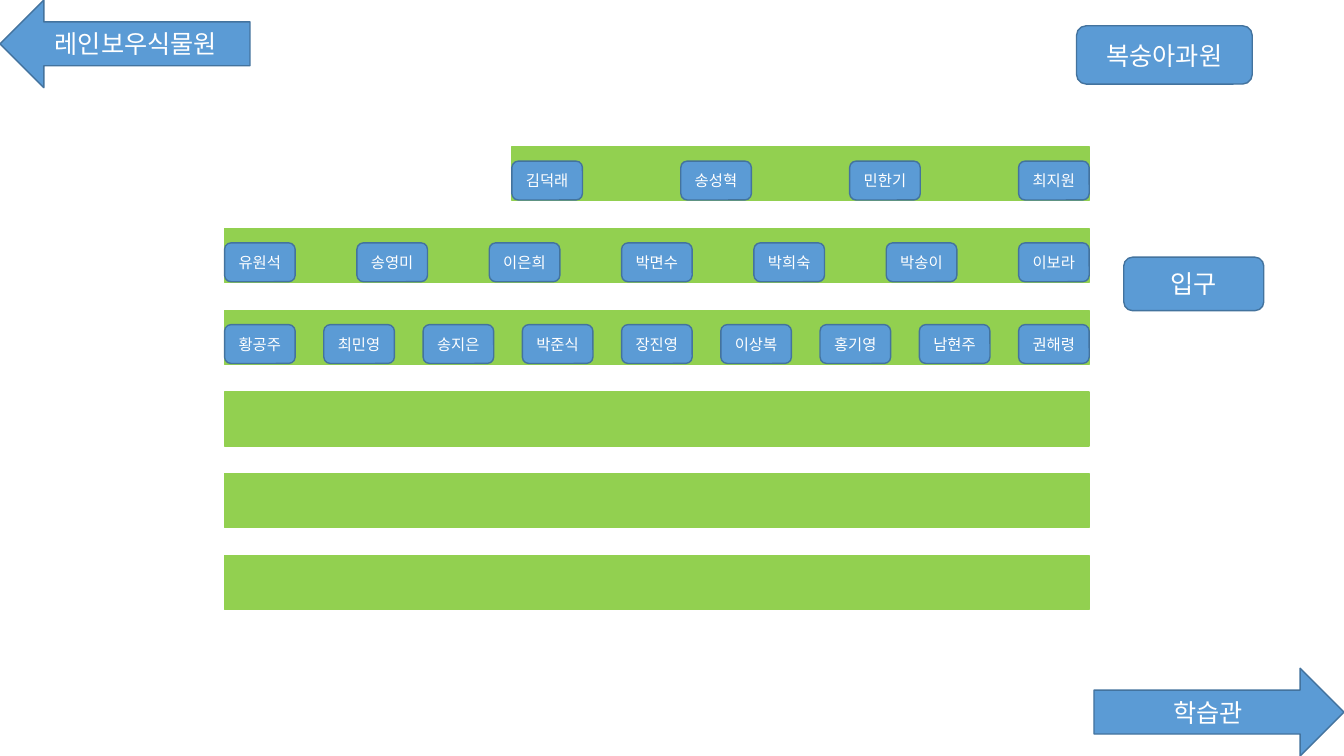
"""Build the orchard tree map with its rows of name tags and direction signs."""

from dataclasses import dataclass

from lxml.etree import SubElement
from pptx import Presentation
from pptx.dml.color import RGBColor
from pptx.enum.shapes import MSO_SHAPE
from pptx.enum.text import MSO_ANCHOR, PP_ALIGN
from pptx.oxml.ns import qn
from pptx.shapes.autoshape import Shape
from pptx.slide import Slide
from pptx.util import Cm, Pt


@dataclass(frozen=True)
class Theme:
    font: str = "Noto Sans CJK KR"
    text: RGBColor = RGBColor(0xFF, 0xFF, 0xFF)
    label_fill: RGBColor = RGBColor(0x5B, 0x9B, 0xD5)
    label_line: RGBColor = RGBColor(0x43, 0x73, 0x9E)
    bed: RGBColor = RGBColor(0x92, 0xD0, 0x50)
    line_width: float = 1
    sign_size: float = 18
    tag_size: float = 11


@dataclass(frozen=True)
class Box:
    left: float
    top: float
    width: float
    height: float


@dataclass(frozen=True)
class Sign:
    text: str
    kind: MSO_SHAPE
    box: Box


@dataclass(frozen=True)
class Bed:
    left: float
    names: tuple[str, ...] = ()


THEME = Theme()
SLIDE_WIDTH, SLIDE_HEIGHT = 33.87, 19.05
ARROW_WIDTH, ARROW_HEIGHT = 6.3, 2.21
BED_LEFT, BED_RIGHT = 5.66, 27.45
BED_TOP, BED_PITCH, BED_HEIGHT = 3.7, 2.06, 1.36
TAG_WIDTH, TAG_HEIGHT, TAG_OFFSET = 1.78, 0.98, 0.36

SIGNS = (
    Sign("학습관", MSO_SHAPE.RIGHT_ARROW,
         Box(SLIDE_WIDTH - ARROW_WIDTH, SLIDE_HEIGHT - ARROW_HEIGHT, ARROW_WIDTH, ARROW_HEIGHT)),
    Sign("레인보우식물원", MSO_SHAPE.LEFT_ARROW, Box(0, 0, ARROW_WIDTH, ARROW_HEIGHT)),
    Sign("복숭아과원", MSO_SHAPE.ROUNDED_RECTANGLE, Box(27.13, 0.65, 4.43, 1.47)),
    Sign("입구", MSO_SHAPE.ROUNDED_RECTANGLE, Box(28.32, 6.48, 3.53, 1.35)),
)
BEDS = (
    Bed(12.9, ("김덕래", "송성혁", "민한기", "최지원")),
    Bed(BED_LEFT, ("유원석", "송영미", "이은희", "박면수", "박희숙", "박송이", "이보라")),
    Bed(BED_LEFT, ("황공주", "최민영", "송지은", "박준식", "장진영", "이상복", "홍기영",
                   "남현주", "권해령")),
    Bed(BED_LEFT),
    Bed(BED_LEFT),
    Bed(BED_LEFT),
)


def add_box(slide: Slide, kind: MSO_SHAPE, box: Box, fill: RGBColor, line: RGBColor) -> Shape:
    """Add a filled and outlined shape without a shadow."""
    shape = slide.shapes.add_shape(
        kind, Cm(box.left), Cm(box.top), Cm(box.width), Cm(box.height))
    shape.shadow.inherit = False
    shape.fill.solid()
    shape.fill.fore_color.rgb = fill
    shape.line.color.rgb = line
    shape.line.width = Pt(THEME.line_width)
    return shape


def add_label(slide: Slide, sign: Sign, size: float) -> None:
    """Add a blue shape with centred white text."""
    shape = add_box(slide, sign.kind, sign.box, THEME.label_fill, THEME.label_line)
    shape.text_frame.vertical_anchor = MSO_ANCHOR.MIDDLE
    paragraph = shape.text_frame.paragraphs[0]
    paragraph.text = sign.text
    paragraph.alignment = PP_ALIGN.CENTER
    paragraph.font.size = Pt(size)
    paragraph.font.color.rgb = THEME.text
    paragraph.font.name = THEME.font
    properties = paragraph._p.pPr.find(qn("a:defRPr"))
    SubElement(properties, qn("a:ea")).set("typeface", THEME.font)


def add_bed(slide: Slide, bed: Bed, top: float) -> None:
    """Add a green bed with its name tags spread evenly from end to end."""
    width = BED_RIGHT - bed.left
    add_box(slide, MSO_SHAPE.RECTANGLE, Box(bed.left, top, width, BED_HEIGHT),
            THEME.bed, THEME.bed)
    for index, name in enumerate(bed.names):
        left = bed.left + index * (width - TAG_WIDTH) / (len(bed.names) - 1)
        box = Box(left, top + TAG_OFFSET, TAG_WIDTH, TAG_HEIGHT)
        add_label(slide, Sign(name, MSO_SHAPE.ROUNDED_RECTANGLE, box), THEME.tag_size)


def main() -> None:
    """Draw the map and save the presentation."""
    presentation = Presentation()
    presentation.slide_width = Cm(SLIDE_WIDTH)
    presentation.slide_height = Cm(SLIDE_HEIGHT)
    slide = presentation.slides.add_slide(presentation.slide_layouts[6])
    for sign in SIGNS:
        add_label(slide, sign, THEME.sign_size)
    for index, bed in enumerate(BEDS):
        add_bed(slide, bed, BED_TOP + index * BED_PITCH)
    presentation.save("out.pptx")


if __name__ == "__main__":
    main()
